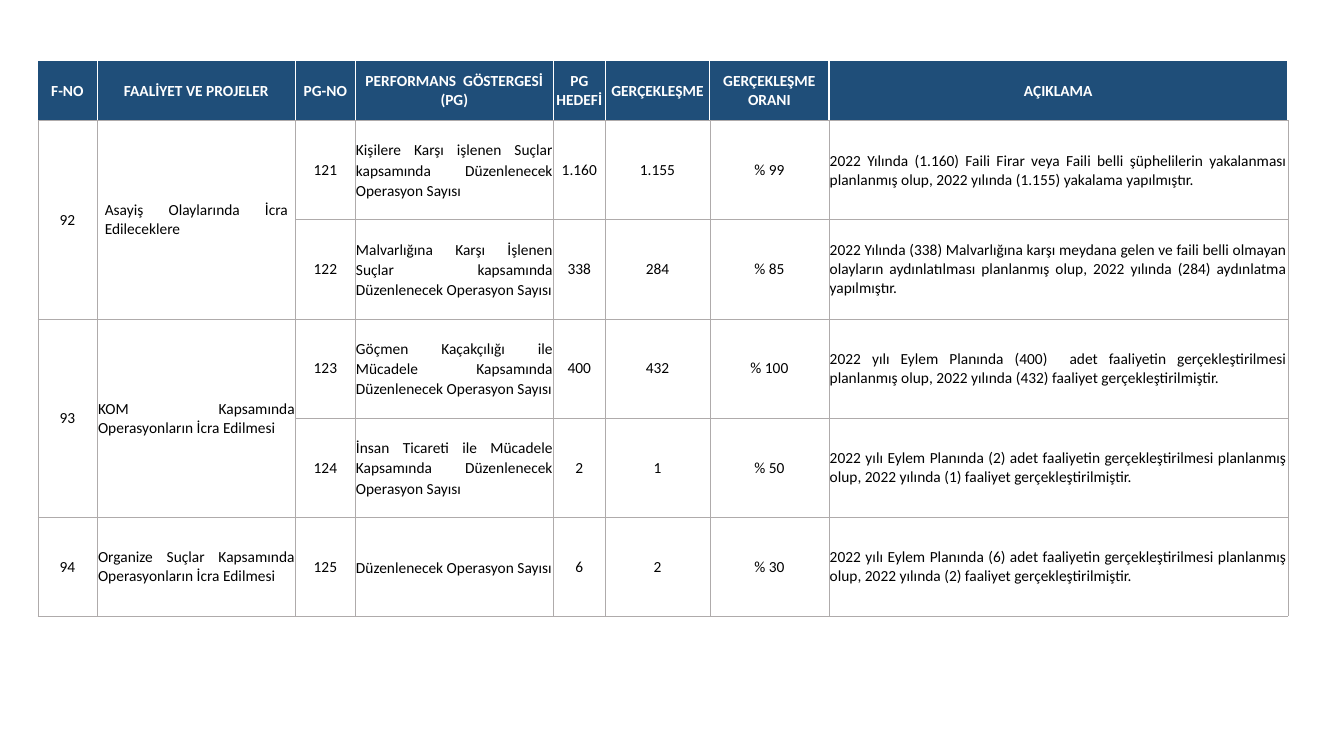
from pptx import Presentation
from pptx import util as u
from pptx.dml.color import RGBColor
from pptx.enum import text
from pptx.oxml import parse_xml
from pptx.oxml.ns import nsdecls

COLOURS = {"header": "1F4E79", "header_text": "FFFFFF", "body_text": "000000", "grid": "AFABAB"}
COLUMN_WIDTHS = [1.5, 5, 1.5, 5, 1.3, 2.64, 3, 11.56]
HEADER_HEIGHT, ROW_HEIGHT = 1.5, 2.5
THIN_INSET, WIDE_INSET = 0.02, 0.19
ACTIVITY, INDICATOR_NO, INDICATOR, EXPLANATION = 1, 2, 3, 7

HEADINGS = [
    "F-NO", "FAALİYET VE PROJELER", "PG-NO", "PERFORMANS  GÖSTERGESİ (PG)",
    "PG\nHEDEFİ", "GERÇEKLEŞME", "GERÇEKLEŞME ORANI", "AÇIKLAMA",
]
ACTIVITIES = [
    ("92", "Asayiş Olaylarında İcra Edileceklere", [
        ("121", "Kişilere Karşı işlenen Suçlar kapsamında Düzenlenecek Operasyon Sayısı",
         "1.160", "1.155", "% 99",
         "2022 Yılında (1.160) Faili Firar veya Faili belli şüphelilerin yakalanması "
         "planlanmış olup, 2022 yılında (1.155) yakalama yapılmıştır."),
        ("122", "Malvarlığına Karşı İşlenen Suçlar kapsamında Düzenlenecek Operasyon Sayısı",
         "338", "284", "% 85",
         "2022 Yılında (338) Malvarlığına karşı meydana gelen ve faili belli olmayan "
         "olayların aydınlatılması planlanmış olup, 2022 yılında (284) aydınlatma yapılmıştır."),
    ]),
    ("93", "KOM Kapsamında Operasyonların İcra Edilmesi", [
        ("123", "Göçmen Kaçakçılığı ile Mücadele Kapsamında Düzenlenecek Operasyon Sayısı",
         "400", "432", "% 100",
         "2022 yılı Eylem Planında (400)  adet faaliyetin gerçekleştirilmesi "
         "planlanmış olup, 2022 yılında (432) faaliyet gerçekleştirilmiştir."),
        ("124", "İnsan Ticareti ile Mücadele Kapsamında Düzenlenecek Operasyon Sayısı",
         "2", "1", "% 50",
         "2022 yılı Eylem Planında (2) adet faaliyetin gerçekleştirilmesi "
         "planlanmış olup, 2022 yılında (1) faaliyet gerçekleştirilmiştir."),
    ]),
    ("94", "Organize Suçlar Kapsamında Operasyonların İcra Edilmesi", [
        ("125", "Düzenlenecek Operasyon Sayısı", "6", "2", "% 30",
         "2022 yılı Eylem Planında (6) adet faaliyetin gerçekleştirilmesi "
         "planlanmış olup, 2022 yılında (2) faaliyet gerçekleştirilmiştir."),
    ]),
]


def set_borders(cell, **sides):
    properties = cell._tc.get_or_add_tcPr()
    for side in "LRTB":
        colour, points = sides[side]
        properties.append(parse_xml(
            f'<a:ln{side} {nsdecls("a")} w="{u.Pt(points)}"><a:solidFill>'
            f'<a:srgbClr val="{COLOURS[colour]}"/></a:solidFill></a:ln{side}>'))


def write_cell(cell, wording, colour, bold=False, justified=False, spacing=None, inset=THIN_INSET):
    cell.vertical_anchor = text.MSO_ANCHOR.MIDDLE
    cell.margin_left = cell.margin_right = u.Cm(inset)
    cell.margin_top, cell.margin_bottom = u.Cm(THIN_INSET), u.Cm(0)
    paragraph = cell.text_frame.paragraphs[0]
    paragraph.alignment = text.PP_ALIGN.JUSTIFY if justified else text.PP_ALIGN.CENTER
    if spacing:
        paragraph.line_spacing = spacing
    for index, line in enumerate(wording.split("\n")):
        if index:
            paragraph.add_line_break()
        run = paragraph.add_run()
        run.text = line
        run.font.name, run.font.size, run.font.bold = "Calibri", u.Pt(11), bold
        run.font.color.rgb = RGBColor.from_string(COLOURS[colour])


def add_header(table):
    edge = ("header_text", 1)
    for column, heading in enumerate(HEADINGS):
        cell = table.cell(0, column)
        write_cell(cell, heading, "header_text", bold=True)
        set_borders(cell, L=edge, R=edge, T=edge, B=("grid", 0.25))
        cell.fill.solid()
        cell.fill.fore_color.rgb = RGBColor.from_string(COLOURS["header"])


def add_body_cell(table, row, column, wording, wide):
    write_cell(
        table.cell(row, column), wording, "body_text",
        justified=column in (ACTIVITY, INDICATOR, EXPLANATION),
        spacing=1.07 if column == INDICATOR else None,
        inset=WIDE_INSET if wide and column in (ACTIVITY, INDICATOR_NO) else THIN_INSET)


def add_activity(table, first_row, number, activity, indicators, wide):
    last_row = first_row + len(indicators) - 1
    for column, wording in enumerate((number, activity)):
        if last_row > first_row:
            table.cell(first_row, column).merge(table.cell(last_row, column))
        add_body_cell(table, first_row, column, wording, wide)
    for row, indicator in enumerate(indicators, first_row):
        for column, wording in enumerate(indicator, INDICATOR_NO):
            add_body_cell(table, row, column, wording, wide)
    return last_row + 1


def rule_body(table):
    thin, medium = ("grid", 0.25), ("grid", 0.5)
    for row in range(1, len(table.rows)):
        for column in range(len(HEADINGS)):
            cell = table.cell(row, column)
            set_borders(cell, L=medium if column else thin,
                        R=thin if column == EXPLANATION else medium, T=thin, B=thin)
            cell.fill.background()


def add_performance_table(slide):
    indicator_count = sum(len(indicators) for _, _, indicators in ACTIVITIES)
    heights = [HEADER_HEIGHT] + [ROW_HEIGHT] * indicator_count
    table = slide.shapes.add_table(
        len(heights), len(HEADINGS), u.Cm(0.95), u.Cm(1.53),
        u.Cm(sum(COLUMN_WIDTHS)), u.Cm(sum(heights))).table
    table.horz_banding = False
    for column, width in zip(table.columns, COLUMN_WIDTHS):
        column.width = u.Cm(width)
    for row, height in zip(table.rows, heights):
        row.height = u.Cm(height)
    add_header(table)
    next_row = 1
    for number, activity, indicators in ACTIVITIES:
        next_row = add_activity(table, next_row, number, activity, indicators, wide=next_row == 1)
    rule_body(table)


def main():
    presentation = Presentation()
    presentation.slide_width, presentation.slide_height = u.Cm(33.87), u.Cm(19.05)
    add_performance_table(presentation.slides.add_slide(presentation.slide_layouts[6]))
    presentation.save("out.pptx")


if __name__ == "__main__":
    main()
